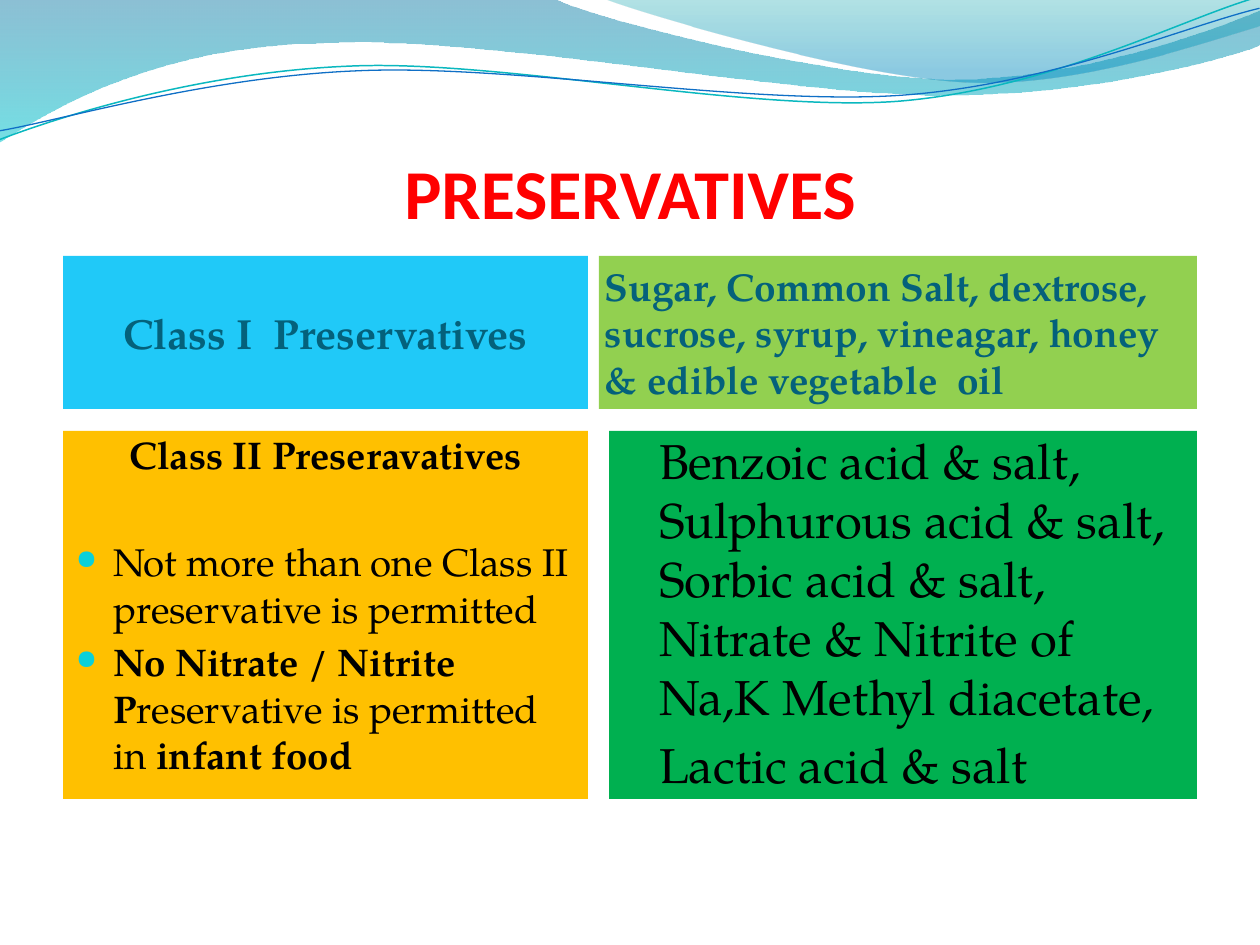
from lxml import etree
from pptx import Presentation
from pptx.dml.color import RGBColor
from pptx.enum.shapes import MSO_SHAPE
from pptx.enum.text import MSO_ANCHOR, PP_ALIGN
from pptx.oxml import parse_xml
from pptx.util import Pt

PX = 914400 / 126
NS = "http://schemas.openxmlformats.org/drawingml/2006/main"
RECT = MSO_SHAPE.RECTANGLE
TOP, MIDDLE, BOTTOM = MSO_ANCHOR.TOP, MSO_ANCHOR.MIDDLE, MSO_ANCHOR.BOTTOM
LEFT, CENTER = PP_ALIGN.LEFT, PP_ALIGN.CENTER
SERIF = "TeX Gyre Pagella"
HANG = 37


def rgb(value):
    return RGBColor.from_string(value)


def add_curve(slide, start, segments, close):
    """Freeform of lines (x, y) and cubic curves (two controls and an end)."""
    fb = slide.shapes.build_freeform(*start, scale=PX)
    for seg in segments:
        fb.add_line_segments(list(zip(seg[::2], seg[1::2])), close=False)
    if close:
        fb.add_line_segments([], close=True)
    sp = fb.convert_to_shape()
    steps = iter(list(sp._element.iter(f"{{{NS}}}lnTo")))
    for seg in segments:
        parts = [next(steps) for _ in range(len(seg) // 2)]
        if len(parts) == 3:
            curve = etree.Element(f"{{{NS}}}cubicBezTo")
            parts[0].addprevious(curve)
            for part in parts:
                curve.append(part[0])
                part.getparent().remove(part)
    sp.shadow.inherit = False
    return sp


prs = Presentation()
prs.slide_width, prs.slide_height = round(1260 * PX), round(945 * PX)
s = prs.slides.add_slide(prs.slide_layouts[6])

# Filled waves: start, segments, gradient stops (position, colour, opacity)
waves = [
    ((0, 0), [(554, -1), (600, 21, 837, 79, 955, 79), (1075, 79, 1207, 33, 1260, 11),
              (1261, 45), (1239, 55, 1096, 96, 940, 95), (784, 95, 481, 35, 324, 43),
              (163, 45, 58, 105, -1, 142), (0, 0)],
     [(0, "0074A1", 45), (100, "00C6CF", 55)]),
    ((604, -1), [(641, 14, 859, 78, 969, 82), (1079, 87, 1211, 40, 1260, 26),
                 (1260, 0), (604, -1)],
     [(0, "00A1A9", 30), (80, "008BBF", 45)]),
]
for start, segments, stops in waves:
    sp = add_curve(s, start, segments, True)
    sp.line.fill.background()
    gs = "".join(f'<a:gs pos="{pos * 1000}"><a:srgbClr val="{color}">'
                 f'<a:alpha val="{alpha * 1000}"/></a:srgbClr></a:gs>'
                 for pos, color, alpha in stops)
    grad = parse_xml(f'<a:gradFill xmlns:a="{NS}" rotWithShape="1"><a:gsLst>{gs}'
                     '</a:gsLst><a:lin ang="5400000" scaled="0"/></a:gradFill>')
    sp._element.spPr.find(f"{{{NS}}}custGeom").addnext(grad)

# Thin wave lines, slightly turned
lines = [
    ((-3, 110), [(58, 90, 199, 52, 350, 53), (499, 53, 745, 118, 896, 114),
                 (1049, 109, 1184, 45, 1260, 27)], "0AB8BF", 0.85),
    ((-2, 101), [(57, 94, 207, 57, 357, 58), (509, 58, 750, 112, 902, 108),
                 (1052, 104, 1188, 52, 1262, 38)], "0F6FC6", 0.75),
]
for start, segments, color, width in lines:
    sp = add_curve(s, start, segments, False)
    sp.rotation = 357.3
    sp.fill.background()
    sp.line.color.rgb = rgb(color)
    sp.line.width = Pt(width)

# Title and panels: box, fill, anchor, insets (left, top, right, bottom),
# font, size, colour, paragraphs (align, space before, indent, bullet, runs)
panels = [
    ((63, 106, 1134, 128), None, BOTTOM, (0, 6, 0, 0), "Calibri", 40, "FF0000",
     [(CENTER, 0, 0, False, [("PRESERVATIVES", True)])]),
    ((63, 256, 525, 153), "20C9F8", MIDDLE, (6, 0, 6, 0), SERIF, 24, "04617B",
     [(CENTER, 4.8, 0, False, [("Class I  Preservatives", True)])]),
    ((599, 256, 598, 153), "92D050", MIDDLE, (6, 0, 6, 0), SERIF, 22.2, "04617B",
     [(LEFT, 4.4, 0, False, [("Sugar, Common Salt, dextrose, sucrose, syrup, vineagar, "
                              "honey & edible vegetable  oil", True)])]),
    ((63, 431, 525, 368), "FFC000", TOP, (13, 0, 13, 6), SERIF, 22, "000000",
     [(CENTER, 4.4, 0, False, [("Class II Preseravatives", True)]),
      (LEFT, 35, HANG, True, [("Not more than one Class II preservative is permitted", False)]),
      (LEFT, 4.4, HANG, True, [("No Nitrate / Nitrite P", True),
                               ("reservative is permitted in ", False),
                               ("infant food", True)])]),
    ((609, 431, 588, 368), "00B050", TOP, (13, 0, 13, 6), SERIF, 28, "000000",
     [(LEFT, 5.6, HANG, False, [("Benzoic acid & salt, Sulphurous acid & salt, Sorbic acid & salt, "
                                 "Nitrate & Nitrite of Na,K Methyl diacetate,", False)]),
      (LEFT, 5.6, HANG, False, [("Lactic acid & salt", False)])]),
]
for box, fill, anchor, insets, font, size, color, paragraphs in panels:
    box = [round(v * PX) for v in box]
    if fill:
        sp = s.shapes.add_shape(RECT, *box)
        sp.shadow.inherit = False
        sp.fill.solid()
        sp.fill.fore_color.rgb = rgb(fill)
        sp.line.fill.background()
    else:
        sp = s.shapes.add_textbox(*box)
    tf = sp.text_frame
    tf.word_wrap = True
    tf.vertical_anchor = anchor
    tf.margin_left, tf.margin_top, tf.margin_right, tf.margin_bottom = [
        round(v * PX) for v in insets]
    for i, (align, before, indent, bullet, runs) in enumerate(paragraphs):
        p = tf.add_paragraph() if i else tf.paragraphs[0]
        p.alignment = align
        p.space_before = Pt(before)
        pPr = p._p.get_or_add_pPr()
        pPr.set("marL", str(round(indent * PX)))
        if bullet:
            pPr.set("indent", str(-round(indent * PX)))
            clr = etree.SubElement(pPr, f"{{{NS}}}buClr")
            etree.SubElement(clr, f"{{{NS}}}srgbClr", val="0BD0D9")
            etree.SubElement(pPr, f"{{{NS}}}buSzPct", val="70000")
            etree.SubElement(pPr, f"{{{NS}}}buChar", char="●")
        for text, bold in runs:
            r = p.add_run()
            r.text = text
            r.font.name = font
            r.font.size = Pt(size)
            r.font.bold = bold
            r.font.color.rgb = rgb(color)

prs.save("out.pptx")
